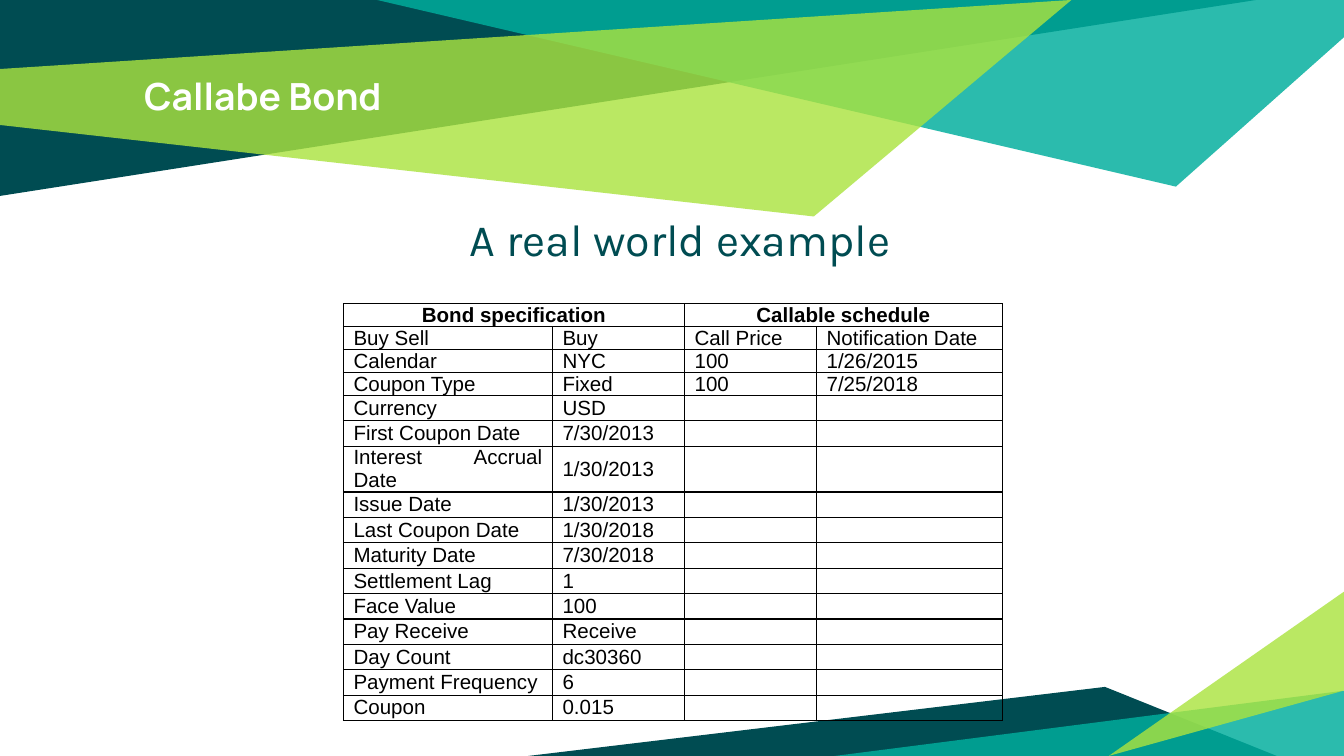
"""Build the callable bond example slide with its specification table."""
from lxml import etree
from pptx import Presentation
from pptx.dml.color import RGBColor
from pptx.enum.text import MSO_ANCHOR, MSO_AUTO_SIZE, PP_ALIGN
from pptx.oxml.ns import qn
from pptx.util import Pt

LEFT, CENTER, JUSTIFY = PP_ALIGN.LEFT, PP_ALIGN.CENTER, PP_ALIGN.JUSTIFY
TOP, MIDDLE = MSO_ANCHOR.TOP, MSO_ANCHOR.MIDDLE
NO_AUTOFIT = MSO_AUTO_SIZE.NONE

WHITE = RGBColor(0xFF, 0xFF, 0xFF)
BLACK = RGBColor(0x00, 0x00, 0x00)
PINE = RGBColor(0x00, 0x4C, 0x52)
TEAL = RGBColor(0x00, 0xAE, 0x9D)
LIME = RGBColor(0xAB, 0xE3, 0x3F)

WIDTH, HEIGHT = 720, 405
TITLE = "Callabe Bond"
SUBTITLE = "A real world example"
HEADINGS = ["Bond specification", "Callable schedule"]
SPECIFICATION = [
    ("Buy Sell", "Buy"),
    ("Calendar", "NYC"),
    ("Coupon Type", "Fixed"),
    ("Currency", "USD"),
    ("First Coupon Date", "7/30/2013"),
    ("Interest Accrual Date", "1/30/2013"),
    ("Issue Date", "1/30/2013"),
    ("Last Coupon Date", "1/30/2018"),
    ("Maturity Date", "7/30/2018"),
    ("Settlement Lag", "1"),
    ("Face Value", "100"),
    ("Pay Receive", "Receive"),
    ("Day Count", "dc30360"),
    ("Payment Frequency", "6"),
    ("Coupon", "0.015"),
]
SCHEDULE = [
    ("Call Price", "Notification Date"),
    ("100", "1/26/2015"),
    ("100", "7/25/2018"),
]
COLUMN_WIDTHS = [112, 70.75, 70.75, 99.5]
TABLE_LEFT, TABLE_TOP, ROW_HEIGHT = 184, 162.75, 12.25
TABLE_SIZE = 11

SHARDS = [
    (PINE, 100, [(0, 0), (0, 105), (673, 0)]),
    (TEAL, 83, [(201.5, 0), (630, 100), (WIDTH, 20), (WIDTH, 0)]),
    (LIME, 81, [(0, 36.75), (0, 67), (435.5, 116), (574, 0)]),
    (PINE, 100, [(283, HEIGHT), (684, HEIGHT), (592.5, 367.5)]),
    (TEAL, 83, [(WIDTH, 369.5), (WIDTH, HEIGHT), (447, HEIGHT)]),
    (LIME, 81, [(WIDTH, 370), (WIDTH, 317), (594.5, HEIGHT)]),
]


def write(frame, text, *, size, font, color, bold=False, align=LEFT,
          anchor=TOP, before=0):
    """Put one formatted paragraph into a text frame."""
    frame.word_wrap = True
    frame.vertical_anchor = anchor
    para = frame.paragraphs[0]
    para.alignment = align
    para.space_before = Pt(before)
    if text:
        span = para.add_run()
        span.text = text
        span.font.size, span.font.name = Pt(size), font
        span.font.bold = bold
        span.font.color.rgb = color
    else:
        etree.SubElement(para._p, qn("a:endParaRPr"), sz=str(size * 100))
    return para


def add_shard(page, color, opacity, points):
    """Draw one closed polygon, translucent below full opacity."""
    builder = page.shapes.build_freeform(*points[0], scale=Pt(1))
    builder.add_line_segments(points[1:], close=True)
    shard = builder.convert_to_shape()
    shard.shadow.inherit = False
    shard.line.fill.background()
    shard.fill.solid()
    shard.fill.fore_color.rgb = color
    if opacity < 100:
        tint = shard._element.spPr.find(".//" + qn("a:srgbClr"))
        etree.SubElement(tint, qn("a:alpha"), val=str(opacity * 1000))


def place(page, box, left, top, width, height):
    """Position a placeholder in front of the shards."""
    box.left, box.top, box.width, box.height = map(Pt, (left, top, width, height))
    frame = box.text_frame
    frame.auto_size = NO_AUTOFIT
    frame.margin_left = frame.margin_right = Pt(7.2)
    frame.margin_top = frame.margin_bottom = Pt(7.2)
    page.shapes._spTree.append(box._element)
    return frame


def format_cell(cell):
    """Give a cell thin black borders, tight margins and no fill."""
    cell.margin_left = cell.margin_right = Pt(5.4)
    cell.margin_top = cell.margin_bottom = 0
    properties = cell._tc.get_or_add_tcPr()
    for side in ("lnL", "lnR", "lnT", "lnB"):
        line = etree.SubElement(properties, qn("a:" + side), w=str(Pt(0.75)))
        fill = etree.SubElement(line, qn("a:solidFill"))
        etree.SubElement(fill, qn("a:srgbClr"), val=str(BLACK))
    cell.fill.background()


def add_bond_table(page):
    """Add the specification beside the call schedule."""
    padding = [("", "")] * (len(SPECIFICATION) - len(SCHEDULE))
    rows = [(HEADINGS[0], "", HEADINGS[1], "")]
    rows += [left + right for left, right in zip(SPECIFICATION, SCHEDULE + padding)]
    table = page.shapes.add_table(
        len(rows), len(COLUMN_WIDTHS), Pt(TABLE_LEFT), Pt(TABLE_TOP),
        Pt(sum(COLUMN_WIDTHS)), Pt(ROW_HEIGHT * len(rows))).table
    table.first_row = table.horz_banding = False
    for column, width in zip(table.columns, COLUMN_WIDTHS):
        column.width = Pt(width)
    for start in (0, 2):
        table.cell(0, start).merge(table.cell(0, start + 1))
    for row, texts in enumerate(rows):
        heading = row == 0
        table.rows[row].height = Pt(ROW_HEIGHT)
        for column, text in enumerate(texts):
            cell = table.cell(row, column)
            format_cell(cell)
            cell.vertical_anchor = TOP if heading else MIDDLE
            write(cell.text_frame, text, size=TABLE_SIZE, font="Arial",
                  color=BLACK, bold=heading, anchor=None,
                  align=CENTER if heading else JUSTIFY)


def main():
    """Assemble and save the slide."""
    deck = Presentation()
    deck.slide_width, deck.slide_height = Pt(WIDTH), Pt(HEIGHT)
    page = deck.slides.add_slide(deck.slide_layouts[1])
    title, body = page.placeholders
    for shard in SHARDS:
        add_shard(page, *shard)
    write(place(page, title, 70, 31.75, 580, 46), TITLE,
          size=20, font="Manrope", color=WHITE, bold=True)
    para = write(place(page, body, 65.5, 106, 592, 294.5), SUBTITLE,
                 size=24, font="Karla", color=PINE, align=CENTER, before=6)
    layout = para._p.get_or_add_pPr()
    layout.set("marL", str(Pt(5.75)))
    layout.set("indent", "0")
    etree.SubElement(layout, qn("a:buNone"))
    add_bond_table(page)
    deck.save("out.pptx")


if __name__ == "__main__":
    main()
